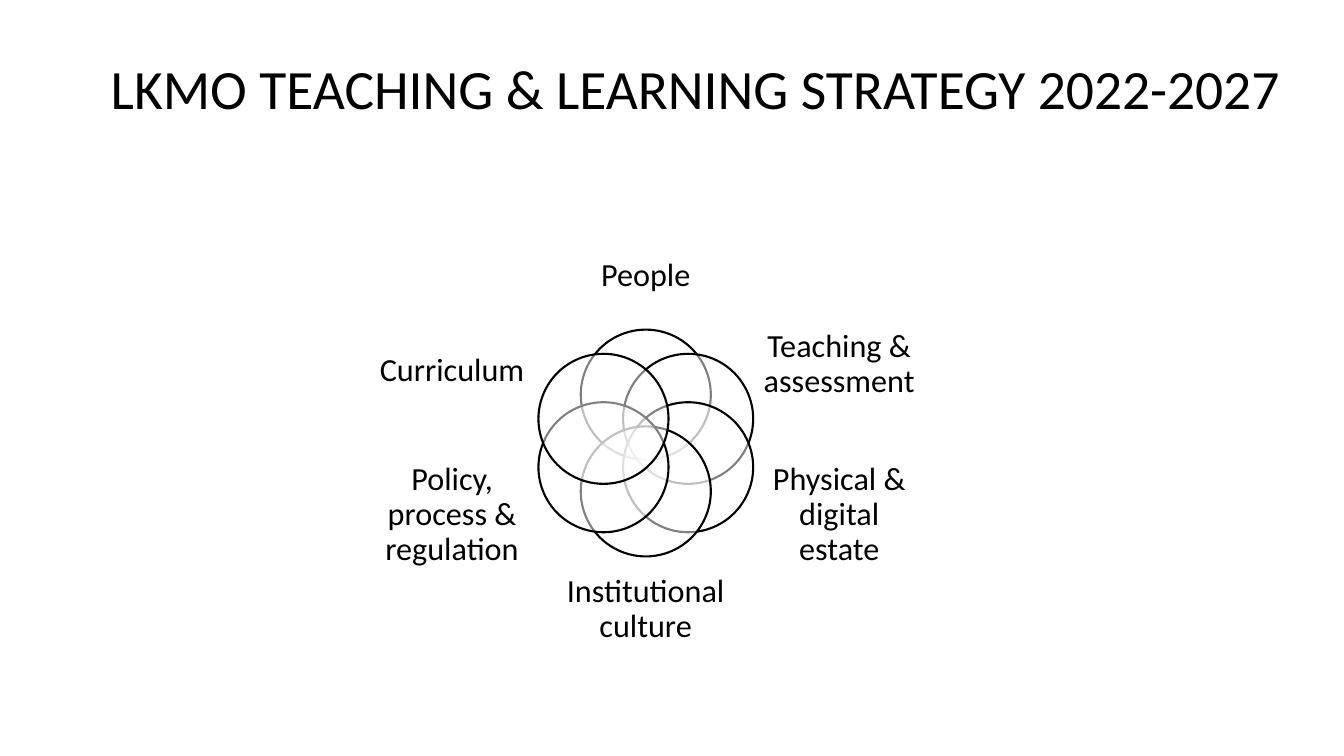
from dataclasses import dataclass
from math import cos, radians, sin

from lxml.etree import SubElement
from pptx import Presentation
from pptx.dml.color import RGBColor
from pptx.enum.shapes import MSO_SHAPE as Shape
from pptx.enum.text import MSO_ANCHOR as Anchor, PP_ALIGN as Align
from pptx.oxml.ns import qn
from pptx.slide import Slide
from pptx.util import Emu, Pt

PX = 9144
BLACK = RGBColor(0, 0, 0)
WHITE = RGBColor(255, 255, 255)
LEFT, TOP, RING, SIZE = 576, 375, 48, 129
FONT = {"name": "Calibri"}


@dataclass
class Label:
    """A text and its box in px."""
    text: str
    x: int
    y: int
    w: int
    h: int


TITLE = Label("LKMO TEACHING & LEARNING STRATEGY 2022-2027", 100, 49, 1184, 145)
PETALS = [
    Label("People", 560, 230, 161, 88),
    Label("Teaching & assessment", 756, 314, 153, 96),
    Label("Physical & digital estate", 756, 457, 153, 108),
    Label("Institutional culture", 560, 561, 161, 88),
    Label("Policy, process & regulation", 372, 457, 153, 108),
    Label("Curriculum", 372, 314, 153, 108),
]
PLAIN = dict(word_wrap=True, vertical_anchor=Anchor.MIDDLE,
             margin_left=0, margin_top=0, margin_right=0, margin_bottom=0)
HEAD = dict(word_wrap=True, vertical_anchor=Anchor.TOP, margin_top=Emu(12 * PX))


def px(*nums: int) -> list[Emu]:
    """Turn px into EMU."""
    return [Emu(n * PX) for n in nums]


def apply(item: object, form: dict) -> None:
    """Set each value of a format on an item."""
    for key, value in form.items():
        setattr(item, key, value)


def write(slide: Slide, label: Label, size: float, align: Align, form: dict) -> None:
    """Add a label as a text box."""
    frame = slide.shapes.add_textbox(*px(label.x, label.y, label.w, label.h)).text_frame
    apply(frame, form)
    para = frame.paragraphs[0]
    apply(para, dict(text=label.text, alignment=align, line_spacing=0.9))
    font = para.runs[0].font
    apply(font, FONT | {"size": Pt(size)})
    font.color.rgb = BLACK


def ring(slide: Slide, turn: int) -> None:
    """Add a half-clear circle, turned clockwise from the top."""
    angle = radians(turn)
    x, y = LEFT + round(RING * sin(angle)), TOP - round(RING * cos(angle))
    disc = slide.shapes.add_shape(Shape.OVAL, *px(x, y, SIZE, SIZE))
    disc.shadow.inherit = False
    disc.fill.solid()
    disc.fill.fore_color.rgb = WHITE
    tint = disc.element.spPr.find(qn("a:solidFill"))[0]
    SubElement(tint, qn("a:alpha"), val="50000")
    disc.line.color.rgb = BLACK
    disc.line.width = Pt(1.5)


def main() -> None:
    """Build the strategy slide."""
    deck = Presentation()
    apply(deck, dict(slide_width=Emu(1333 * PX), slide_height=Emu(750 * PX)))
    slide = deck.slides.add_slide(deck.slide_layouts[6])
    for index, label in enumerate(PETALS):
        ring(slide, index * 360 // len(PETALS))
        write(slide, label, 23, Align.CENTER, PLAIN)
    write(slide, TITLE, 39.6, Align.LEFT, HEAD)
    deck.save("out.pptx")


if __name__ == "__main__":
    main()
